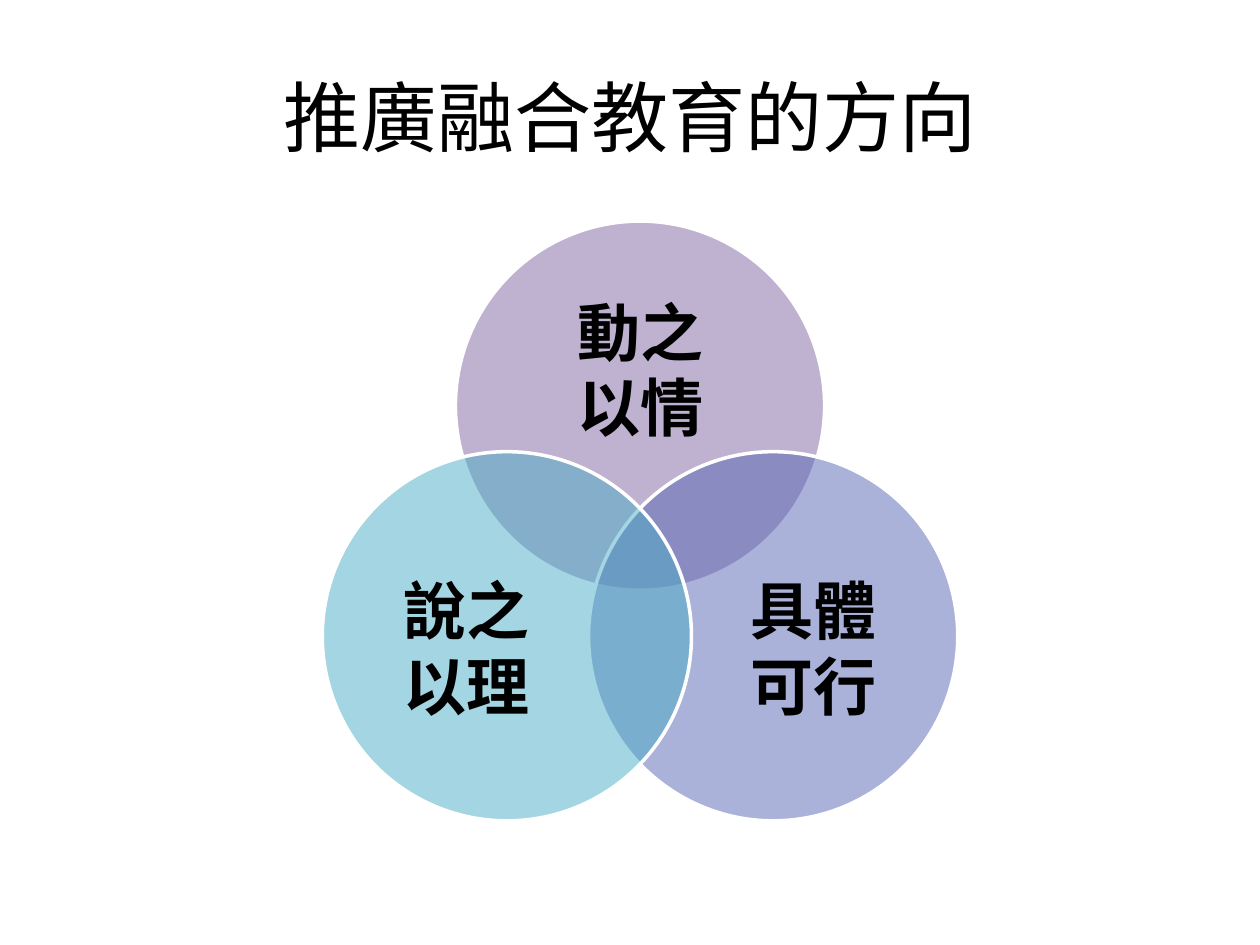
from math import cos, sin, radians
from lxml.etree import SubElement as Sub
from pptx import Presentation
from pptx.dml.color import RGBColor as RGB
from pptx.enum.shapes import MSO_SHAPE as Kind
from pptx.enum.text import MSO_ANCHOR as Anchor, PP_ALIGN as Align
from pptx.oxml.ns import qn
from pptx.util import Inches as In, Pt

BLACK = RGB(0x00, 0x00, 0x00)
WHITE = RGB(0xFF, 0xFF, 0xFF)
PURPLE = RGB(0x80, 0x64, 0xA2)
INDIGO = RGB(0x57, 0x67, 0xB4)
TEAL = RGB(0x4B, 0xAC, 0xC6)

WIDE, HIGH = 10, 7.5
TITLE = "推廣融合教育的方向"
HEAD = {"name": "Noto Sans CJK SC", "size": Pt(44)}
BODY = {"name": "Arial", "size": Pt(36), "bold": True}

MID = (5.08, 4.44)
SPAN = 2.93
REACH = 1.22
TOP = (0.73, 0.45)
SIDE = (0.6, 0.55)
RINGS = [
    (-90, PURPLE, ("動之", "以情"), TOP, (0, -0.1)),
    (30, INDIGO, ("具體", "可行"), SIDE, (0.11, 0.03)),
    (150, TEAL, ("說之", "以理"), SIDE, (-0.11, 0.03)),
]


def place(x, y, w, h):
    return [In(v) for v in (x - w / 2, y - h / 2, w, h)]


def write(slide, area, lines, look, inset=None, pitch=None):
    frame = slide.shapes.add_textbox(*area).text_frame
    form = {"word_wrap": True, "vertical_anchor": Anchor.MIDDLE}
    if inset is not None:
        form |= {f"margin_{s}": inset for s in ("left", "right", "top", "bottom")}
    for key, val in form.items():
        setattr(frame, key, val)
    for i, line in enumerate(lines):
        para = frame.add_paragraph() if i else frame.paragraphs[0]
        para.alignment = Align.CENTER
        para.line_spacing = pitch
        run = para.add_run()
        run.text = line
        run.font.color.rgb = BLACK
        for key, val in look.items():
            setattr(run.font, key, val)
        Sub(run.font._element, qn("a:ea"), typeface=look["name"])


def ring(slide, area, color):
    disc = slide.shapes.add_shape(Kind.OVAL, *area)
    disc.shadow.inherit = False
    disc.fill.solid()
    disc.fill.fore_color.rgb = color
    tint = disc._element.spPr.find(qn("a:solidFill"))[0]
    Sub(tint, qn("a:alpha"), val="50000")
    disc.line.color.rgb = WHITE
    disc.line.width = Pt(2)


def main():
    deck = Presentation()
    deck.slide_width, deck.slide_height = In(WIDE), In(HIGH)
    slide = deck.slides.add_slide(deck.slide_layouts[6])
    write(slide, place(WIDE / 2, 0.92, 0.9 * WIDE, 1.25), [TITLE], HEAD)
    for turn, color, lines, size, shift in RINGS:
        x = MID[0] + REACH * cos(radians(turn))
        y = MID[1] + REACH * sin(radians(turn))
        ring(slide, place(x, y, SPAN, SPAN), color)
        w, h, dx, dy = (SPAN * v for v in size + shift)
        write(slide, place(x + dx, y + dy, w, h), lines, BODY, 0, Pt(43))
    deck.save("out.pptx")


if __name__ == "__main__":
    main()
